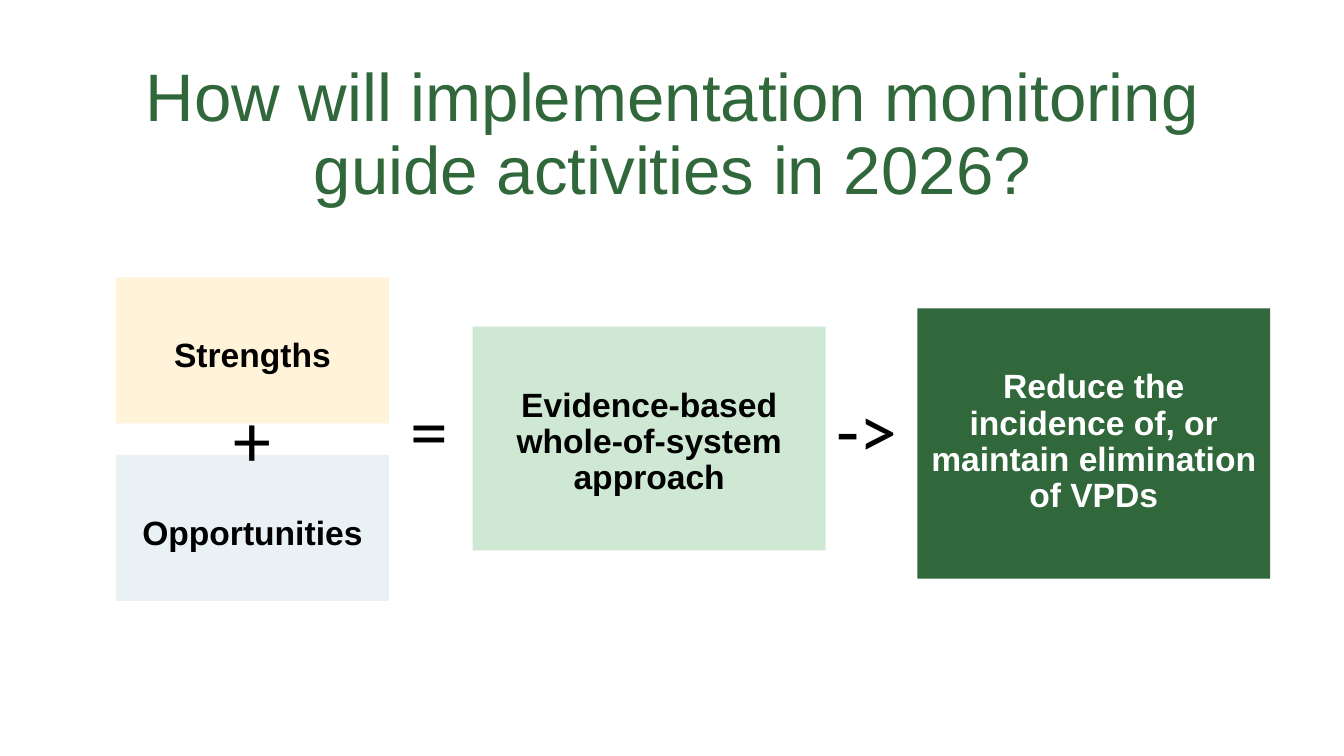
from lxml import etree
from pptx import Presentation
from pptx import util as u
from pptx.dml.color import RGBColor
from pptx.enum import shapes, text
from pptx.oxml.ns import qn

HUES = {"green": "30683B", "mint": "CEE8D3", "cream": "FFF3D9",
        "ice": "EAF1F5", "black": "000000", "white": "FFFFFF"}
HEAD = {"name": "Arial", "size": u.Pt(48), "bold": False}
LABEL = {"name": "Arial", "size": u.Pt(24), "bold": True}
SIGN = {"name": "Calibri", "size": u.Pt(54), "bold": False}


class Deck:
    def __init__(self):
        self.prs = Presentation()
        self.prs.slide_width = u.Inches(13.33)
        self.prs.slide_height = u.Inches(7.5)
        self.slide = self.prs.slides.add_slide(self.prs.slide_layouts[1])

    def place(self, shape, at):
        for side, value in zip(("left", "top", "width", "height"), at):
            setattr(shape, side, u.Cm(value))

    def label(self, shape, words, style, hue, line=0.9, **frame):
        """Fill a shape with one centred paragraph; frame holds text frame values."""
        tf = shape.text_frame
        tf.text = words
        values = {"word_wrap": True, "auto_size": text.MSO_AUTO_SIZE.NONE,
                  "vertical_anchor": text.MSO_ANCHOR.TOP}
        for key, value in {**values, **frame}.items():
            setattr(tf, key, value)
        para = tf.paragraphs[0]
        props = para._p.get_or_add_pPr()
        props.set("marL", "0")
        props.set("indent", "0")
        etree.SubElement(props, qn("a:buNone"))
        para.alignment = text.PP_ALIGN.CENTER
        para.line_spacing = line
        para.space_before = u.Pt(0)
        for key, value in style.items():
            setattr(para.font, key, value)
        para.font.color.rgb = RGBColor.from_string(HUES[hue])

    def title(self, words, at):
        shape = self.slide.shapes.title
        self.place(shape, at)
        self.label(shape, words, HEAD, "green", margin_bottom=u.Cm(1.96),
                   vertical_anchor=text.MSO_ANCHOR.MIDDLE)

    def box(self, words, at, fill, hue="black", holder=None):
        shape = holder
        if shape is None:
            shape = self.slide.shapes.add_shape(
                shapes.MSO_SHAPE.RECTANGLE, *map(u.Cm, at))
            shape.shadow.inherit = False
        else:
            self.place(shape, at)
        shape.fill.solid()
        shape.fill.fore_color.rgb = RGBColor.from_string(HUES[fill])
        shape.line.fill.background()
        self.label(shape, words, LABEL, hue, margin_top=u.Cm(1.55))

    def sign(self, words, at):
        shape = self.slide.shapes.add_textbox(*map(u.Cm, at))
        self.label(shape, words, SIGN, "black", line=1.0)


def main():
    deck = Deck()
    deck.title("How will implementation monitoring guide activities in 2026?",
               (2.34, 2.51, 29.21, 3.68))
    deck.box("Strengths", (2.92, 6.99, 6.88, 3.68), "cream",
             holder=deck.slide.placeholders[1])
    deck.box("Opportunities", (2.92, 11.46, 6.88, 3.68), "ice")
    deck.box("Evidence-based whole-of-system approach",
             (11.91, 8.23, 8.89, 5.64), "mint")
    deck.box("Reduce the incidence of, or maintain elimination of VPDs",
             (23.11, 7.77, 8.89, 6.81), "green", "white")
    deck.sign("=", (8.74, 9.53, 4.14, 2.57))
    deck.sign("+", (5.61, 9.75, 1.47, 2.57))
    deck.sign("->", (19.76, 9.53, 4.14, 2.57))
    deck.prs.save("out.pptx")


if __name__ == "__main__":
    main()
